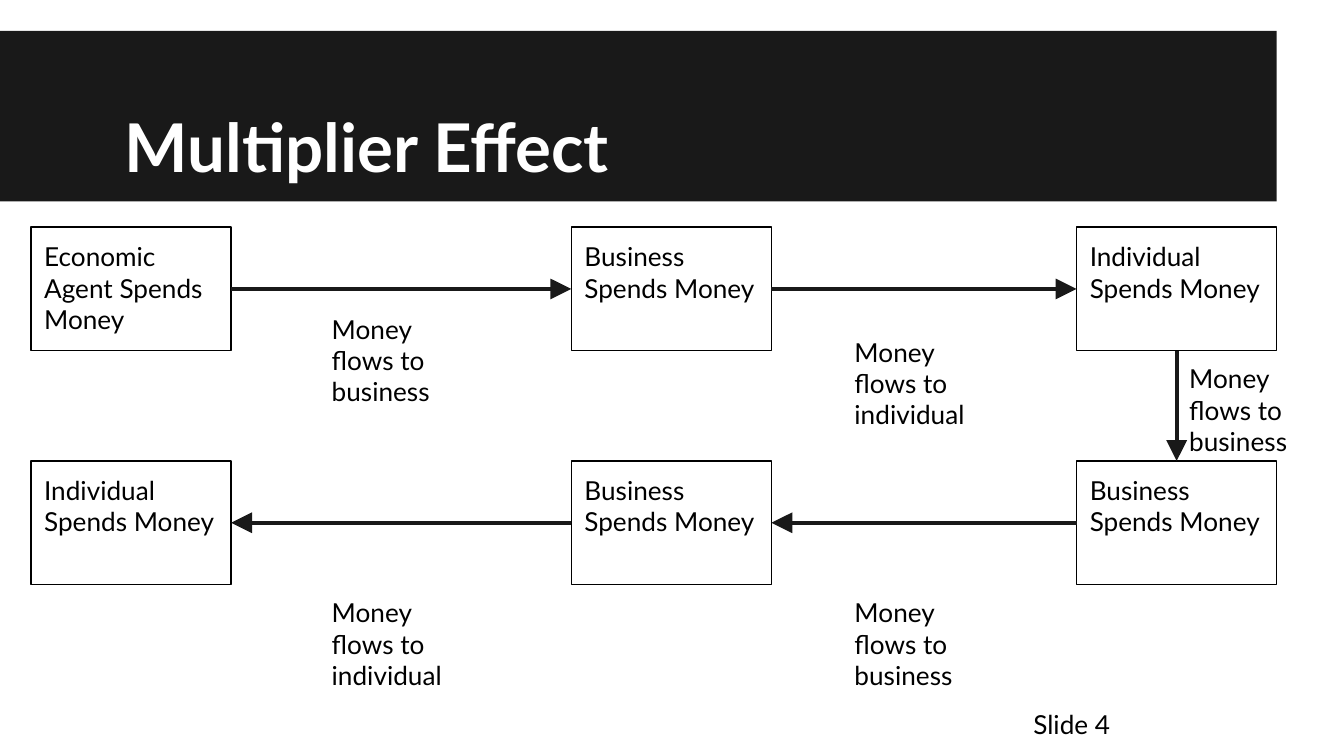
from dataclasses import dataclass
from enum import IntEnum

import lxml.etree
import pptx
import pptx.dml.color
import pptx.enum.shapes
import pptx.enum.text
import pptx.oxml.ns
import pptx.presentation
import pptx.shapes.autoshape
import pptx.slide
import pptx.util
from pptx.util import Inches


@dataclass(frozen=True)
class Theme:
    font: str = "Lato"
    dark: str = "191919"
    light: str = "FFFFFF"
    ink: str = "000000"
    title_size: float = 36
    body_size: float = 14
    border: float = 0.75
    arrow: float = 2.25
    inset: float = 0.1


@dataclass(frozen=True)
class Stage:
    text: str
    column: int
    row: int


@dataclass(frozen=True)
class FlowLabel:
    receiver: str
    left: float
    top: float


class Side(IntEnum):
    TOP = 0
    LEFT = 1
    BOTTOM = 2
    RIGHT = 3


THEME = Theme()
SLIDE_WIDTH = 10
SLIDE_HEIGHT = SLIDE_WIDTH * 9 / 16
COLUMNS = (0.23, 4.25, 8.01)
ROWS = (1.69, 3.43)
STAGE_WIDTH, STAGE_HEIGHT = 1.49, 0.92
LABEL_WIDTH, LABEL_HEIGHT = 1.24, 0.83

STAGES = (
    Stage("Economic Agent Spends Money", 0, 0),
    Stage("Business Spends Money", 1, 0),
    Stage("Individual Spends Money", 2, 0),
    Stage("Business Spends Money", 2, 1),
    Stage("Business Spends Money", 1, 1),
    Stage("Individual Spends Money", 0, 1),
)
FLOW_LABELS = (
    FlowLabel("business", 2.37, 2.23),
    FlowLabel("individual", 6.26, 2.4),
    FlowLabel("business", 8.75, 2.6),
    FlowLabel("business", 6.26, 4.34),
    FlowLabel("individual", 2.37, 4.34),
)


def rgb(value: str) -> pptx.dml.color.RGBColor:
    return pptx.dml.color.RGBColor.from_string(value)


def write(
    holder: pptx.shapes.autoshape.Shape,
    text: str,
    size: float = THEME.body_size,
    color: str = THEME.ink,
    bold: bool = False,
    anchor: pptx.enum.text.MSO_ANCHOR = pptx.enum.text.MSO_ANCHOR.TOP,
    indent: float = 0,
) -> None:
    frame = holder.text_frame
    frame.word_wrap = True
    frame.vertical_anchor = anchor
    frame.margin_left = frame.margin_right = Inches(THEME.inset)
    frame.margin_top = frame.margin_bottom = Inches(THEME.inset)
    paragraph = frame.paragraphs[0]
    paragraph.alignment = pptx.enum.text.PP_ALIGN.LEFT
    if indent:
        paragraph._p.get_or_add_pPr().set("indent", str(Inches(indent)))
    run = paragraph.add_run()
    run.text = text
    run.font.name = THEME.font
    run.font.size = pptx.util.Pt(size)
    run.font.bold = bold
    run.font.color.rgb = rgb(color)


def add_text(
    slide: pptx.slide.Slide, left: float, top: float, width: float, height: float
) -> pptx.shapes.autoshape.Shape:
    return slide.shapes.add_textbox(Inches(left), Inches(top), Inches(width), Inches(height))


def add_rectangle(
    slide: pptx.slide.Slide, left: float, top: float, width: float, height: float
) -> pptx.shapes.autoshape.Shape:
    rectangle = slide.shapes.add_shape(
        pptx.enum.shapes.MSO_SHAPE.RECTANGLE,
        Inches(left), Inches(top), Inches(width), Inches(height),
    )
    rectangle.shadow.inherit = False
    return rectangle


def draw_header(slide: pptx.slide.Slide) -> None:
    band = add_rectangle(slide, 0, 0.23, 9.5, 1.27)
    band.fill.solid()
    band.fill.fore_color.rgb = rgb(THEME.dark)
    band.line.fill.background()
    title = add_text(slide, 0.5, 0.23, 9, 1.25)
    write(title, "Multiplier Effect", THEME.title_size, THEME.light, True,
          pptx.enum.text.MSO_ANCHOR.BOTTOM, 0.33)


def draw_stage(slide: pptx.slide.Slide, stage: Stage) -> pptx.shapes.autoshape.Shape:
    box = add_rectangle(slide, COLUMNS[stage.column], ROWS[stage.row], STAGE_WIDTH, STAGE_HEIGHT)
    box.fill.background()
    box.line.color.rgb = rgb(THEME.ink)
    box.line.width = pptx.util.Pt(THEME.border)
    write(box, stage.text)
    return box


def facing_sides(giver: Stage, taker: Stage) -> tuple[Side, Side]:
    if giver.row != taker.row:
        return Side.BOTTOM, Side.TOP
    if giver.column < taker.column:
        return Side.RIGHT, Side.LEFT
    return Side.LEFT, Side.RIGHT


def draw_flow(
    slide: pptx.slide.Slide,
    giver: pptx.shapes.autoshape.Shape,
    taker: pptx.shapes.autoshape.Shape,
    sides: tuple[Side, Side],
) -> None:
    arrow = slide.shapes.add_connector(pptx.enum.shapes.MSO_CONNECTOR.STRAIGHT, 0, 0, 0, 0)
    arrow.begin_connect(giver, int(sides[0]))
    arrow.end_connect(taker, int(sides[1]))
    arrow.line.color.rgb = rgb(THEME.dark)
    arrow.line.width = pptx.util.Pt(THEME.arrow)
    lxml.etree.SubElement(
        arrow.line._get_or_add_ln(), pptx.oxml.ns.qn("a:tailEnd"),
        type="triangle", w="lg", len="lg",
    )
    lxml.etree.SubElement(arrow._element.spPr, pptx.oxml.ns.qn("a:effectLst"))


def draw_label(slide: pptx.slide.Slide, label: FlowLabel) -> None:
    caption = add_text(slide, label.left, label.top, LABEL_WIDTH, LABEL_HEIGHT)
    write(caption, f"Money flows to {label.receiver}")


def main() -> None:
    deck = pptx.Presentation()
    deck.slide_width, deck.slide_height = Inches(SLIDE_WIDTH), Inches(SLIDE_HEIGHT)
    slide = deck.slides.add_slide(deck.slide_layouts[6])
    draw_header(slide)
    write(add_text(slide, 7.59, 5.17, 2.41, 0.46), "Slide 4")
    boxes = [draw_stage(slide, stage) for stage in STAGES]
    for step in range(len(STAGES) - 1):
        sides = facing_sides(STAGES[step], STAGES[step + 1])
        draw_flow(slide, boxes[step], boxes[step + 1], sides)
    for label in FLOW_LABELS:
        draw_label(slide, label)
    deck.save("out.pptx")


if __name__ == "__main__":
    main()
